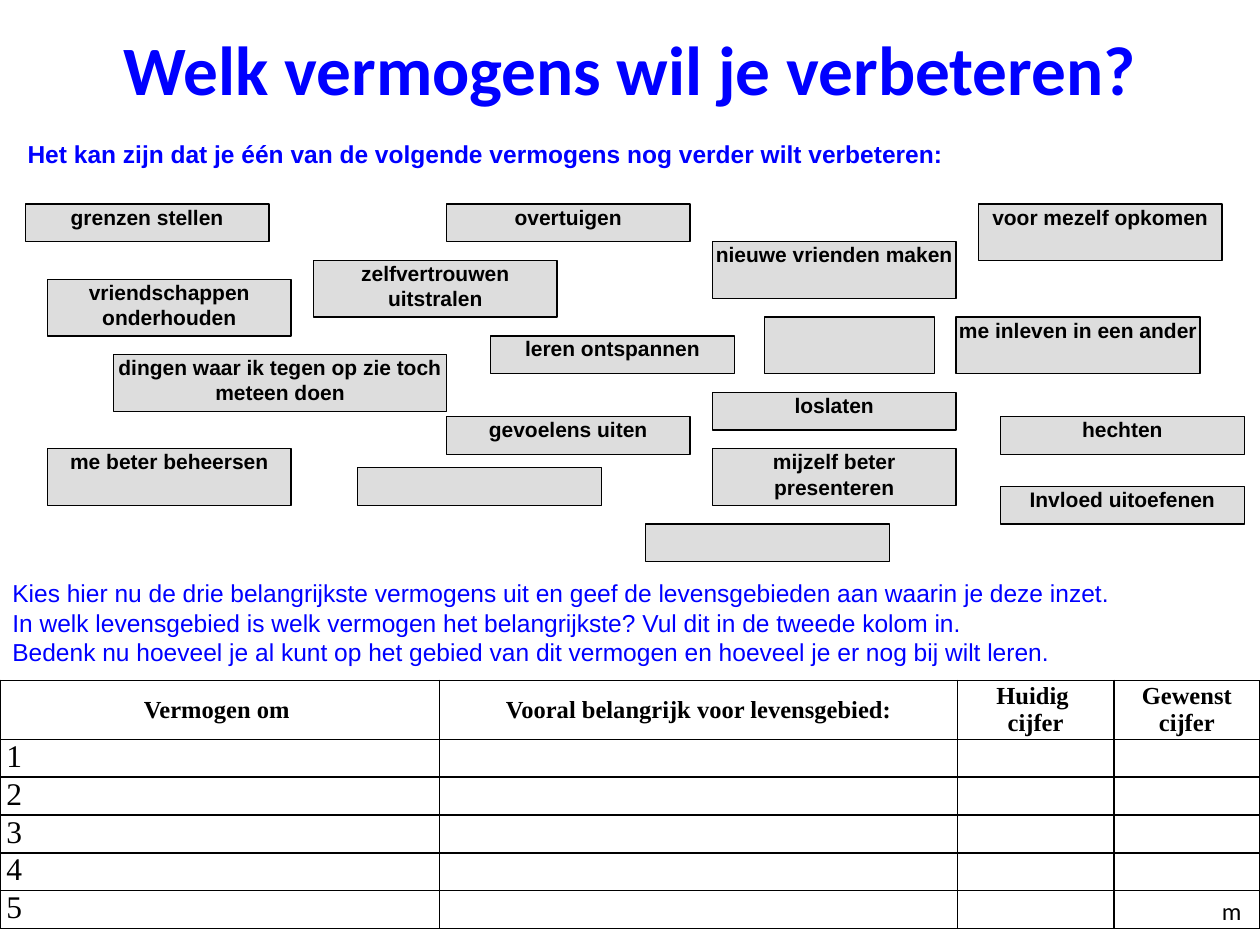
import pptx
import pptx.dml.color
import pptx.enum.shapes
import pptx.enum.text
import pptx.oxml
import pptx.oxml.ns
import pptx.util

Inches, Pt = pptx.util.Inches, pptx.util.Pt
ALIGN, ANCHOR = pptx.enum.text.PP_ALIGN, pptx.enum.text.MSO_ANCHOR

BLUE, BLACK, GREY, WHITE = "0000FF", "000000", "DDDDDD", "FFFFFF"

TITLE = "Welk vermogens wil je verbeteren?"
INTRO = "Het kan zijn dat je één van de volgende vermogens nog verder wilt verbeteren:"
TASK = [
    "Kies hier nu de drie belangrijkste vermogens uit en geef de levensgebieden aan waarin je deze inzet.",
    "In welk levensgebied is welk vermogen het belangrijkste? Vul dit in de tweede kolom in.",
    "Bedenk nu hoeveel je al kunt op het gebied van dit vermogen en hoeveel je er nog bij wilt leren.",
]
# text, grid column, grid row, columns wide, rows high
ABILITIES = [
    ("grenzen stellen", 0, 0, 11, 2),
    ("zelfvertrouwen uitstralen", 13, 3, 11, 3),
    ("overtuigen", 19, 0, 11, 2),
    ("nieuwe vrienden maken", 31, 2, 11, 3),
    ("vriendschappen onderhouden", 1, 4, 11, 3),
    ("voor mezelf opkomen", 43, 0, 11, 3),
    ("me inleven in een ander", 42, 6, 11, 3),
    ("leren ontspannen", 21, 7, 11, 2),
    ("dingen waar ik tegen op zie toch meteen doen", 4, 8, 15, 3),
    ("loslaten", 31, 10, 11, 2),
    ("hechten", 44, 11.3, 11, 2),
    ("gevoelens uiten", 19, 11.3, 11, 2),
    ("me beter beheersen", 1, 13, 11, 3),
    ("", 15, 14, 11, 2),
    ("", 28, 17, 11, 2),
    ("Invloed uitoefenen", 44, 15, 11, 2),
    ("", 33.35, 6, 7.67, 3),
    ("mijzelf beter presenteren", 31, 13, 11, 3),
]
GRID_LEFT, GRID_TOP = 0.2, 1.62
COL_STEP, ROW_STEP = 7.74 / 44, 2.54 / 17

HEADERS = ["Vermogen om ", "Vooral belangrijk voor levensgebied:",
           "Huidig \vcijfer", "Gewenst\ncijfer"]
COL_WIDTHS = [3.49, 4.11, 1.24, 1.16]
HEADER_HEIGHT, ROW_HEIGHT, ROW_COUNT = 0.43, 0.28, 5


def rgb(color):
    return pptx.dml.color.RGBColor.from_string(color)


def write(tf, text, size, font, color, bold=False, align=ALIGN.LEFT):
    tf.text = text
    for p in tf.paragraphs:
        p.alignment = align
        p.font.size, p.font.name, p.font.bold = Pt(size), font, bold
        p.font.color.rgb = rgb(color)


def add_text(s, box, text, size, font, color, bold=False, align=ALIGN.LEFT,
             anchor=ANCHOR.MIDDLE, wrap=True):
    tf = s.shapes.add_textbox(*map(Inches, box)).text_frame
    tf.word_wrap, tf.vertical_anchor = wrap, anchor
    write(tf, text, size, font, color, bold, align)


def add_ability(s, text, col, row, cols, rows):
    sp = s.shapes.add_shape(
        pptx.enum.shapes.MSO_SHAPE.RECTANGLE,
        Inches(GRID_LEFT + col * COL_STEP), Inches(GRID_TOP + row * ROW_STEP),
        Inches(cols * COL_STEP), Inches(rows * ROW_STEP))
    sp.shadow.inherit = False
    sp.fill.solid()
    sp.fill.fore_color.rgb = rgb(GREY)
    sp.line.color.rgb = rgb(BLACK)
    sp.line.width = Pt(0.75)
    tf = sp.text_frame
    tf.word_wrap, tf.vertical_anchor = True, ANCHOR.TOP
    tf.margin_left = tf.margin_right = tf.margin_top = tf.margin_bottom = 0
    if text:
        write(tf, text, 12, "Arial", BLACK, True, ALIGN.CENTER)


def style_cell(cell):
    """Give a cell narrow margins, a white fill and black borders."""
    cell.margin_left = cell.margin_right = Inches(0.05)
    cell.margin_top = cell.margin_bottom = 0
    tc_pr = cell._tc.get_or_add_tcPr()
    for side in ("lnL", "lnR", "lnT", "lnB"):
        tc_pr.append(pptx.oxml.parse_xml(
            f'<a:{side} {pptx.oxml.ns.nsdecls("a")} w="{Pt(1)}"><a:solidFill>'
            f'<a:srgbClr val="{BLACK}"/></a:solidFill></a:{side}>'))
    cell.fill.solid()
    cell.fill.fore_color.rgb = rgb(WHITE)


def add_score_table(s):
    height = HEADER_HEIGHT + ROW_COUNT * ROW_HEIGHT
    table = s.shapes.add_table(ROW_COUNT + 1, len(HEADERS), 0, Inches(5.4),
                               Inches(sum(COL_WIDTHS)), Inches(height)).table
    for column, width in zip(table.columns, COL_WIDTHS):
        column.width = Inches(width)
    for i, row in enumerate(table.rows):
        row.height = Inches(ROW_HEIGHT if i else HEADER_HEIGHT)
        for j, cell in enumerate(row.cells):
            style_cell(cell)
            if i == 0:
                cell.vertical_anchor = ANCHOR.MIDDLE
                write(cell.text_frame, HEADERS[j], 14, "Times New Roman", BLACK,
                      True, ALIGN.CENTER)
            else:
                write(cell.text_frame, "" if j else str(i), 18, "Times New Roman", BLACK)


def main():
    prs = pptx.Presentation()
    prs.slide_width, prs.slide_height = Inches(10), Inches(7.5)
    s = prs.slides.add_slide(prs.slide_layouts[6])
    add_text(s, (0.5, 0, 9, 1.07), TITLE, 39.6, "Calibri", BLUE, True, ALIGN.CENTER)
    add_score_table(s)
    add_text(s, (0.12, 1.05, 9.69, 0.34), INTRO, 14, "Arial", BLUE, True)
    for ability in ABILITIES:
        add_ability(s, *ability)
    add_text(s, (0, 4.33, 10, 1.01), "\n".join(TASK), 14, "Arial", BLUE,
             anchor=ANCHOR.BOTTOM)
    add_text(s, (9.6, 7.06, 0.36, 0.34), "m", 14, "Calibri", "020202",
             anchor=ANCHOR.TOP, wrap=False)
    prs.save("out.pptx")


if __name__ == "__main__":
    main()
